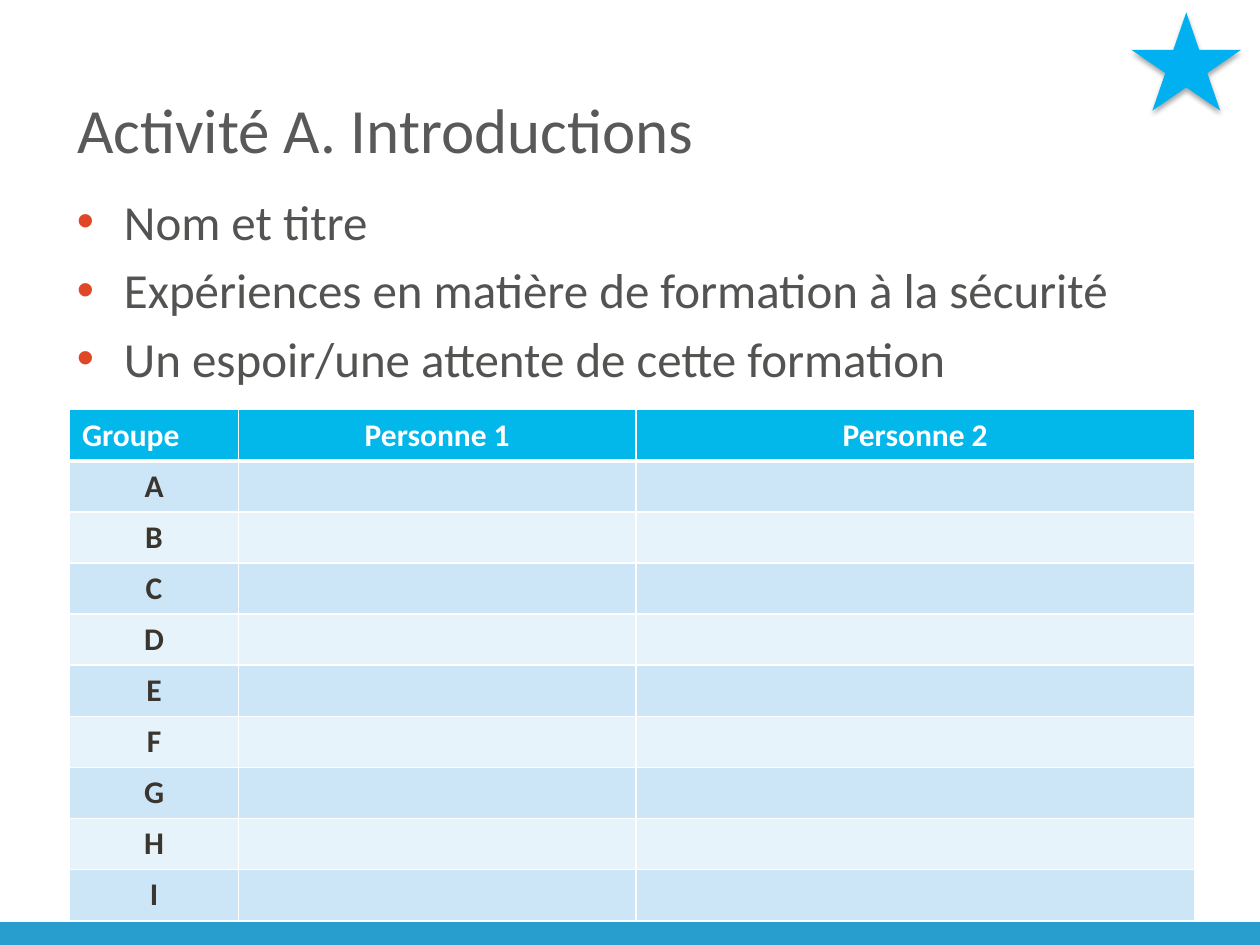
from dataclasses import dataclass

from lxml import etree
from pptx import Presentation
from pptx import util as u
from pptx.dml.color import RGBColor
from pptx.enum import shapes, text
from pptx.oxml import ns


@dataclass(frozen=True)
class Theme:
    font: str = "Calibri"
    title: str = "595959"
    body: str = "535352"
    bullet: str = "E04726"
    bar: str = "279ECE"
    star: str = "00B0F0"
    header: str = "02B7EA"
    bands: tuple = ("CCE6F7", "E7F3FB")
    group: str = "3B352F"
    white: str = "FFFFFF"
    title_size: int = 36
    body_size: int = 28
    table_size: int = 18


theme = Theme()


def style(para, size, color, bold=False):
    para.font.name = theme.font
    para.font.size = u.Pt(size)
    para.font.bold = bold
    para.font.color.rgb = RGBColor.from_string(color)


def add_xml(parent, markup):
    parent.append(etree.fromstring(
        f'<a:root xmlns:a="{ns.nsuri("a")}">{markup}</a:root>')[0])


deck = Presentation()
deck.slide_width = u.Cm(25.4)
deck.slide_height = u.Cm(19.05)
page = deck.slides.add_slide(deck.slide_layouts[5])

# Title
title = page.shapes.title
title.left, title.top = u.Cm(1.3), u.Cm(1.24)
title.width, title.height = u.Cm(22.83), u.Cm(2.69)
title.text_frame.text = "Activité A. Introductions"
title.text_frame.vertical_anchor = text.MSO_ANCHOR.MIDDLE
para = title.text_frame.paragraphs[0]
para.alignment = text.PP_ALIGN.LEFT
style(para, theme.title_size, theme.title)

# Footer bar
bar_top = u.Cm(18.59)
bar = page.shapes.add_shape(shapes.MSO_SHAPE.RECTANGLE, 0, bar_top,
                            deck.slide_width, deck.slide_height - bar_top)
bar.shadow.inherit = False
bar.fill.solid()
bar.fill.fore_color.rgb = RGBColor.from_string(theme.bar)
bar.line.fill.background()

# Bulleted topics
topics = ["Nom et titre",
          "Expériences en matière de formation à la sécurité",
          "Un espoir/une attente de cette formation"]
box = page.shapes.add_textbox(u.Cm(1.3), u.Cm(3.73), u.Cm(23.27), u.Cm(4.5))
frame = box.text_frame
frame.word_wrap = True
for index, topic in enumerate(topics):
    para = frame.add_paragraph() if index else frame.paragraphs[0]
    para.text = topic
    if index:
        para.space_before = u.Pt(5.6)
    props = para._p.get_or_add_pPr()
    props.set("marL", str(u.Cm(0.95)))
    props.set("indent", str(-u.Cm(0.95)))
    add_xml(props, f'<a:buClr><a:srgbClr val="{theme.bullet}"/></a:buClr>')
    add_xml(props, '<a:buFont typeface="Arial"/>')
    add_xml(props, '<a:buChar char="•"/>')
    style(para, theme.body_size, theme.body)

# Group table
rows = [["Groupe", "Personne 1", "Personne 2"]]
rows += [[letter, "", ""] for letter in "ABCDEFGHI"]
widths = [u.Cm(3.41), u.Cm(8.01), u.Cm(11.26)]
row_height = u.Cm(1.03)
table = page.shapes.add_table(len(rows), len(widths), u.Cm(1.4), u.Cm(8.26),
                              sum(widths), row_height * len(rows)).table
for column, width in zip(table.columns, widths):
    column.width = width
for r, row in enumerate(rows):
    table.rows[r].height = row_height
    for c, label in enumerate(row):
        cell = table.cell(r, c)
        cell.text = label
        para = cell.text_frame.paragraphs[0]
        if (r, c) != (0, 0):
            para.alignment = text.PP_ALIGN.CENTER
        style(para, theme.table_size, theme.group if r else theme.white, True)
        thick_side = {0: "B", 1: "T"}.get(r)
        for side in "LRTB":
            weight = u.Pt(3 if side == thick_side else 1)
            add_xml(cell._tc.get_or_add_tcPr(),
                    f'<a:ln{side} w="{weight}"><a:solidFill>'
                    f'<a:srgbClr val="{theme.white}"/></a:solidFill></a:ln{side}>')
        cell.fill.solid()
        color = theme.bands[(r - 1) % 2] if r else theme.header
        cell.fill.fore_color.rgb = RGBColor.from_string(color)

# Star with a soft shadow below it
star = page.shapes.add_shape(shapes.MSO_SHAPE.STAR_5_POINT, u.Cm(22.81),
                             u.Cm(0.25), u.Cm(2.21), u.Cm(1.98))
star.fill.solid()
star.fill.fore_color.rgb = RGBColor.from_string(theme.star)
star.line.fill.background()
star.shadow.inherit = False
add_xml(star._element.spPr.find(ns.qn("a:effectLst")),
        f'<a:outerShdw blurRad="{u.Pt(3.1)}" dist="{u.Pt(1.8)}" dir="5400000" '
        'rotWithShape="0"><a:srgbClr val="000000"><a:alpha val="35000"/>'
        '</a:srgbClr></a:outerShdw>')

deck.save("out.pptx")
